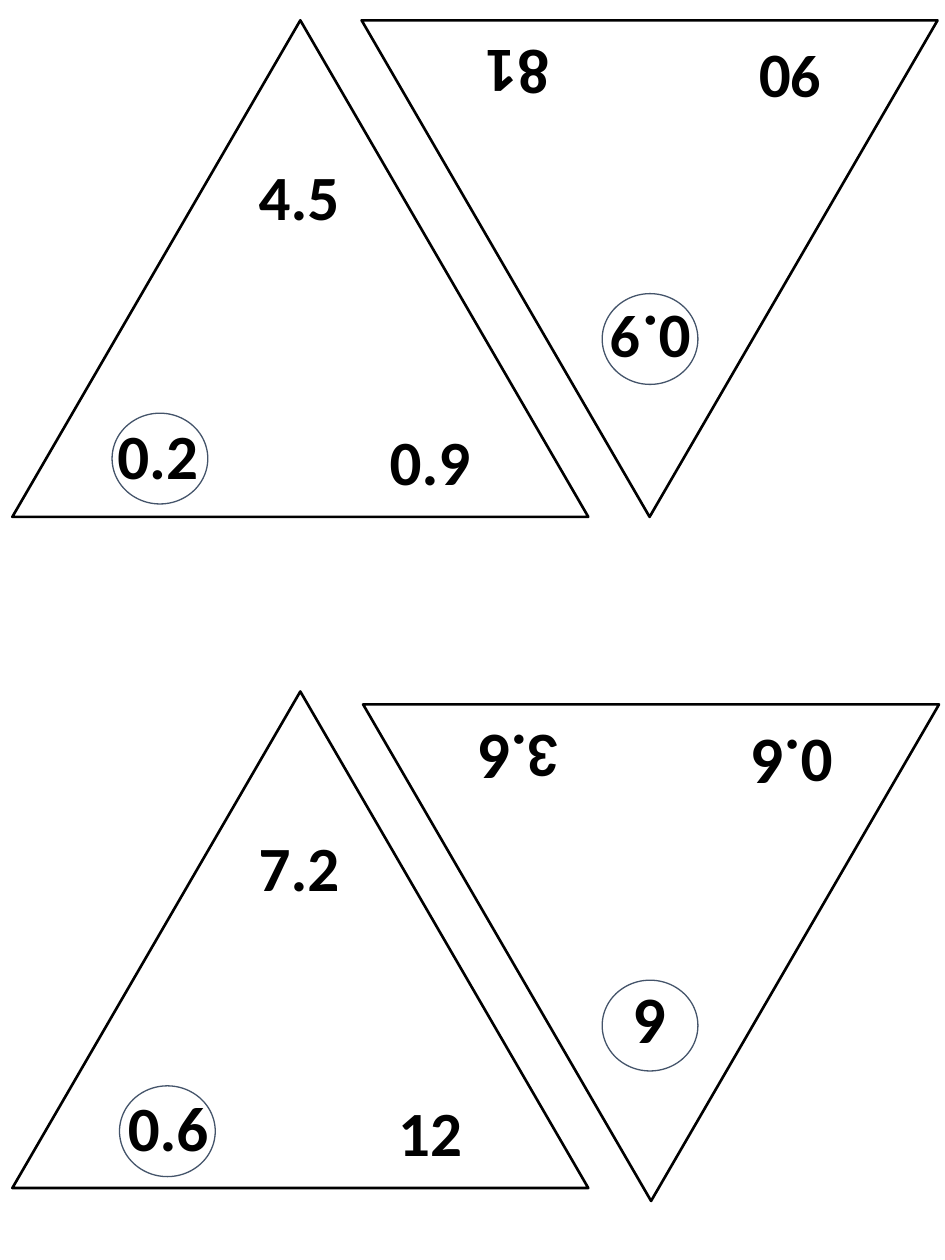
from dataclasses import dataclass

from pptx import Presentation
from pptx.dml.color import RGBColor
from pptx.enum.shapes import MSO_SHAPE
from pptx.enum.text import MSO_AUTO_SIZE, PP_ALIGN
from pptx.shapes.autoshape import Shape
from pptx.shapes.shapetree import GroupShapes, SlideShapes
from pptx.slide import Slide
from pptx.util import Cm, Pt

COLORS = {"ink": "000000", "paper": "FFFFFF", "ring": "44546A"}
FONT = "Calibri"
CARD_W, CARD_H = 11.61, 10.01
RING_W, RING_H = 1.93, 1.83
LABEL_H = 1.8


@dataclass(frozen=True)
class Label:
    """A number; cx is its centre and top its upper edge, in cm from the card corner."""
    text: str
    cx: float
    top: float
    width: float = 3.78


@dataclass(frozen=True)
class Card:
    """A triangle card; ring is the circle's offset in cm from the card corner."""
    left: float
    top: float
    rotation: int
    labels: tuple[Label, ...]
    ring: tuple[float, float]


CARDS = (
    Card(0.25, 0.41, 0, (
        Label("4.5", 5.78, 2.64),
        Label("0.2", 2.93, 7.87, 3.38),
        Label("0.9", 8.42, 7.98)), (2.01, 7.92)),
    Card(7.29, 0.41, 180, (
        Label("0.9", 5.82, 5.56, 3.2),
        Label("90", 8.65, 0.33, 3.38),
        Label("81", 3.14, 0.2)), (4.85, 5.51)),
    Card(0.25, 13.94, 0, (
        Label("7.2", 5.78, 2.64, 3.2),
        Label("0.6", 3.14, 7.87),
        Label("12", 8.42, 7.98)), (2.16, 7.95)),
    Card(7.32, 14.2, 180, (
        Label("6", 5.79, 5.56, 3.2),
        Label("0.6", 8.65, 0.33, 3.38),
        Label("3.6", 3.14, 0.23)), (4.82, 5.56)),
)


def color(name: str) -> RGBColor:
    return RGBColor.from_string(COLORS[name])


def add_outline(shapes: SlideShapes | GroupShapes, kind: MSO_SHAPE, left: float, top: float,
                width: float, height: float, line: str, weight: float) -> Shape:
    sp = shapes.add_shape(kind, Cm(left), Cm(top), Cm(width), Cm(height))
    sp.shadow.inherit = False
    sp.fill.background()
    sp.line.color.rgb = color(line)
    sp.line.width = Pt(weight)
    return sp


def add_label(shapes: GroupShapes, card: Card, label: Label) -> None:
    sp = shapes.add_textbox(Cm(card.left + label.cx - label.width / 2),
                            Cm(card.top + label.top), Cm(label.width), Cm(LABEL_H))
    sp.rotation = card.rotation
    tf = sp.text_frame
    tf.word_wrap = True
    tf.auto_size = MSO_AUTO_SIZE.SHAPE_TO_FIT_TEXT
    p = tf.paragraphs[0]
    p.text = label.text
    p.alignment = PP_ALIGN.CENTER
    p.font.name = FONT
    p.font.size = Pt(36)
    p.font.bold = True
    p.font.color.rgb = color("ink")


def add_card(s: Slide, card: Card) -> None:
    shapes = s.shapes.add_group_shape().shapes
    triangle = add_outline(shapes, MSO_SHAPE.ISOSCELES_TRIANGLE, card.left, card.top,
                           CARD_W, CARD_H, "ink", 1.5)
    triangle.rotation = card.rotation
    triangle.fill.solid()
    triangle.fill.fore_color.rgb = color("paper")
    for label in card.labels:
        add_label(shapes, card, label)
    dx, dy = card.ring
    add_outline(s.shapes, MSO_SHAPE.OVAL, card.left + dx, card.top + dy,
                RING_W, RING_H, "ring", 0.75)


def main() -> None:
    prs = Presentation()
    prs.slide_width, prs.slide_height = Cm(19.05), Cm(25.4)
    s = prs.slides.add_slide(prs.slide_layouts[6])
    for card in CARDS:
        add_card(s, card)
    prs.save("out.pptx")


if __name__ == "__main__":
    main()
